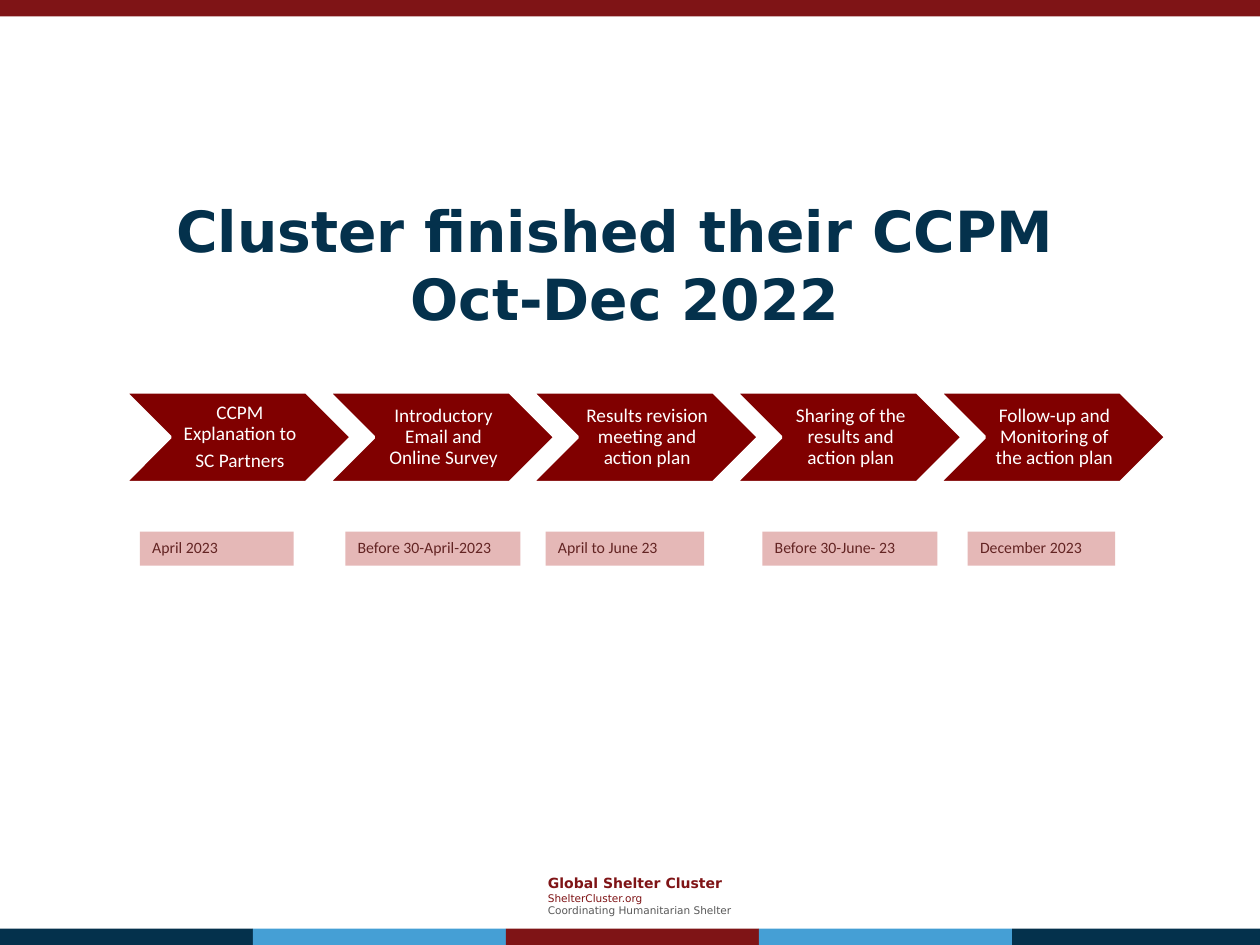
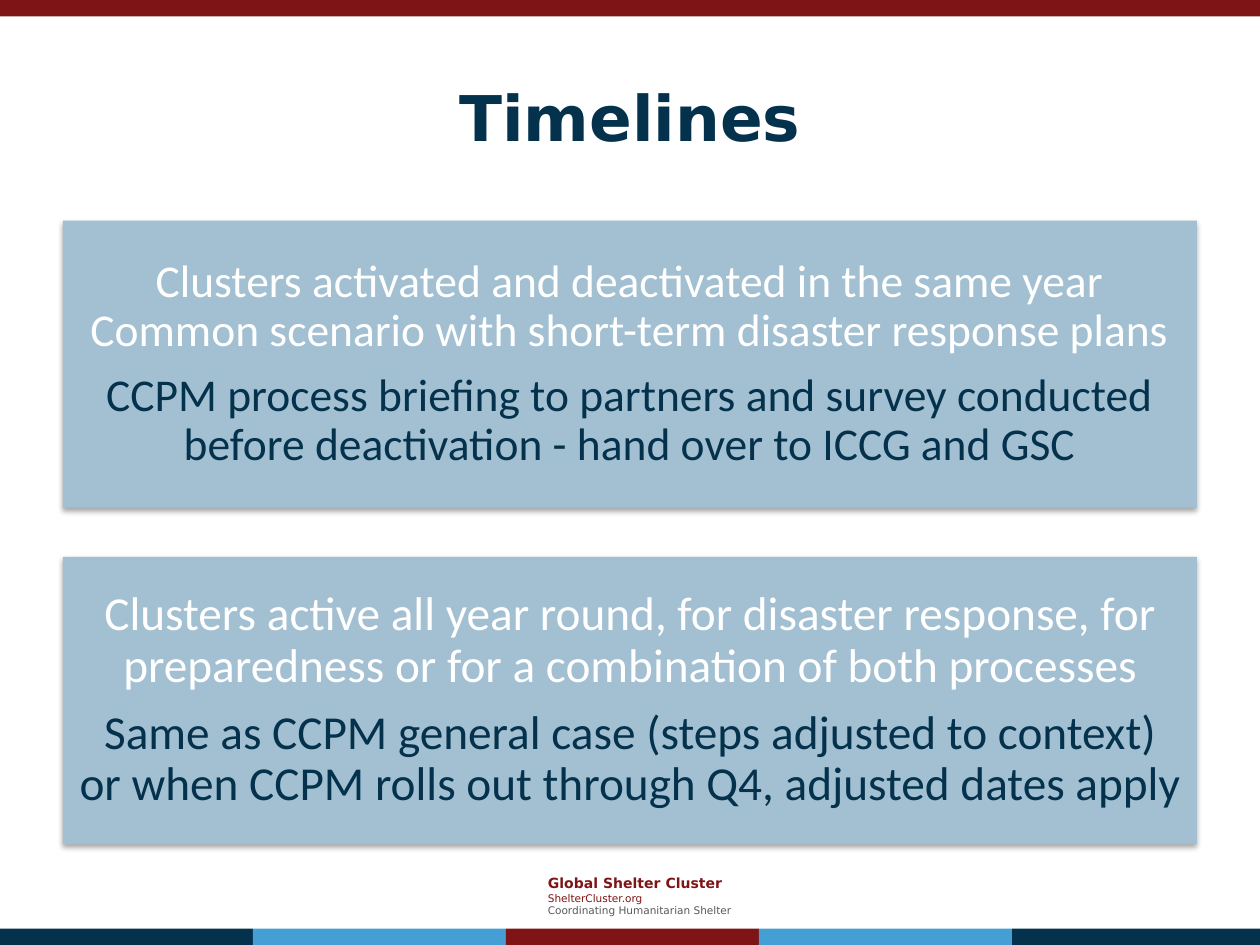
from lxml.etree import SubElement
from pptx import Presentation
from pptx.dml.color import RGBColor
from pptx.enum.shapes import MSO_SHAPE
from pptx.enum.text import MSO_ANCHOR, PP_ALIGN
from pptx.oxml.ns import qn
from pptx.util import Inches, Pt


class Theme:
    red, navy, sky = "7F1416", "04314C", "459FD5"
    maroon, pink, wine = "800000", "E5B8B7", "632423"
    pale, white, grey, black = "A2C0D2", "FFFFFF", "595959", "000000"
    head, body = "DejaVu Sans", "Calibri"
    brand, small, step, date = 8, 6, 11, 9


CELL = Inches(0.1)
COLS, ROWS, BAND = 100, 75, 1.3


def box(slide, cells, fill=None, kind=MSO_SHAPE.RECTANGLE):
    spot = [round(n * CELL) for n in cells]
    if not fill:
        return slide.shapes.add_textbox(*spot)
    shape = slide.shapes.add_shape(kind, *spot)
    shape.shadow.inherit = False
    shape.fill.solid()
    shape.fill.fore_color.rgb = RGBColor.from_string(fill)
    shape.line.fill.background()
    return shape


def write(shape, lines, frame, para, font):
    text = shape.text_frame
    for key, value in {"word_wrap": True, **frame}.items():
        setattr(text, key, value)
    for i, (words, color, extra) in enumerate(lines):
        par = text.add_paragraph() if i else text.paragraphs[0]
        par.text = words
        for key, value in para.items():
            setattr(par, key, value)
        for run in par.runs:
            for key, value in {**font, **extra}.items():
                setattr(run.font, key, value)
            run.font.color.rgb = RGBColor.from_string(color)


def_mid = {"vertical_anchor": MSO_ANCHOR.MIDDLE}
center = {"alignment": PP_ALIGN.CENTER}
left = {"alignment": PP_ALIGN.LEFT}
tight = {**center, "line_spacing": 0.9}
sides = ["margin_left", "margin_top", "margin_right", "margin_bottom"]

deck = Presentation()
deck.slide_width, deck.slide_height = COLS * CELL, ROWS * CELL

titles = [
    ("Cluster finished their CCPM \vOct-Dec 2022", 32.4, (4.6, 14.7, 90, 12.5)),
    ("Timelines", 36, (5, 3, 90, 12.5)),
]
footer = [
    ("Global Shelter Cluster", Theme.red, {"size": Pt(Theme.brand), "bold": True}),
    ("ShelterCluster.org", Theme.red, {}),
    ("Coordinating Humanitarian Shelter", Theme.grey, {}),
]
bands = [Theme.navy, Theme.sky, Theme.red, Theme.sky, Theme.navy]
pitch = 20.08

for title, size, cells in titles:
    slide = deck.slides.add_slide(deck.slide_layouts[6])
    write(box(slide, (42.5, 68.9, 19, 4.4)), footer, def_mid, left,
          {"name": Theme.head, "size": Pt(Theme.small)})
    box(slide, (0, 0, COLS, BAND), Theme.red)
    for i, color in enumerate(bands):
        x = i * pitch
        box(slide, (x, ROWS - BAND, min(pitch, COLS - x), BAND), color)
    write(box(slide, cells), [(title, Theme.navy, {})], def_mid, center,
          {"name": Theme.head, "size": Pt(size), "bold": True})

flow, times = deck.slides

steps = [
    ["CCPM Explanation to", "SC Partners"],
    ["Introductory Email and Online Survey"],
    ["Results revision meeting and action plan"],
    ["Sharing of the results and action plan"],
    ["Follow-up and Monitoring of the action plan"],
]
inset = dict(zip(sides, map(Inches, (0.05, 0.02, 0.02, 0.02))))
for i, words in enumerate(steps):
    arrow = box(flow, (9.9 + i * 16.16, 31.1, 18, 7.2), Theme.maroon,
                MSO_SHAPE.CHEVRON)
    arrow.line.color.rgb = RGBColor.from_string(Theme.white)
    arrow.line.width = Pt(2)
    write(arrow, [(line, Theme.white, {}) for line in words],
          {**def_mid, **inset}, {**tight, "space_after": Pt(0.35 * Theme.step)},
          {"name": Theme.body, "size": Pt(Theme.step)})

dates = [
    ("April 2023", 11.1, 12.2),
    ("Before 30-April-2023", 27.4, 13.9),
    ("April to June 23", 43.3, 12.6),
    ("Before 30-June- 23", 60.5, 13.9),
    ("December 2023", 76.8, 11.7),
]
for date, x, wide in dates:
    write(box(flow, (x, 42.2, wide, 2.7), Theme.pink), [(date, Theme.wine, {})],
          {"vertical_anchor": MSO_ANCHOR.TOP}, left,
          {"name": Theme.body, "size": Pt(Theme.date)})

cases = [
    ("Clusters activated and deactivated in the same year\v"
     "Common scenario with short-term disaster response plans",
     "CCPM process briefing to partners and survey conducted "
     "before deactivation - hand over to ICCG and GSC", 26),
    ("Clusters active all year round, for disaster response, for "
     "preparedness or for a combination of both processes",
     "Same as CCPM general case (steps adjusted to context)\v"
     "or when CCPM rolls out through Q4, adjusted dates apply", 27),
]
pad = dict.fromkeys(sides, Inches(0.11))
for i, (case, plan, size) in enumerate(cases):
    panel = box(times, (5, 17.5 + i * 26.7, 90, 22.8), Theme.pale)
    glow = panel.shadow._element.find(qn("a:effectLst"))
    shade = SubElement(glow, qn("a:outerShdw"), blurRad=str(Pt(3.1)),
                       dist=str(Pt(1.8)), dir="5400000", rotWithShape="0")
    tint = SubElement(shade, qn("a:srgbClr"), val=Theme.black)
    SubElement(tint, qn("a:alpha"), val="35000")
    write(panel, [(case, Theme.white, {}), (plan, Theme.navy, {})],
          {**def_mid, **pad}, {**tight, "space_after": Pt(0.35 * size)},
          {"name": Theme.body, "size": Pt(size)})

deck.save("out.pptx")
